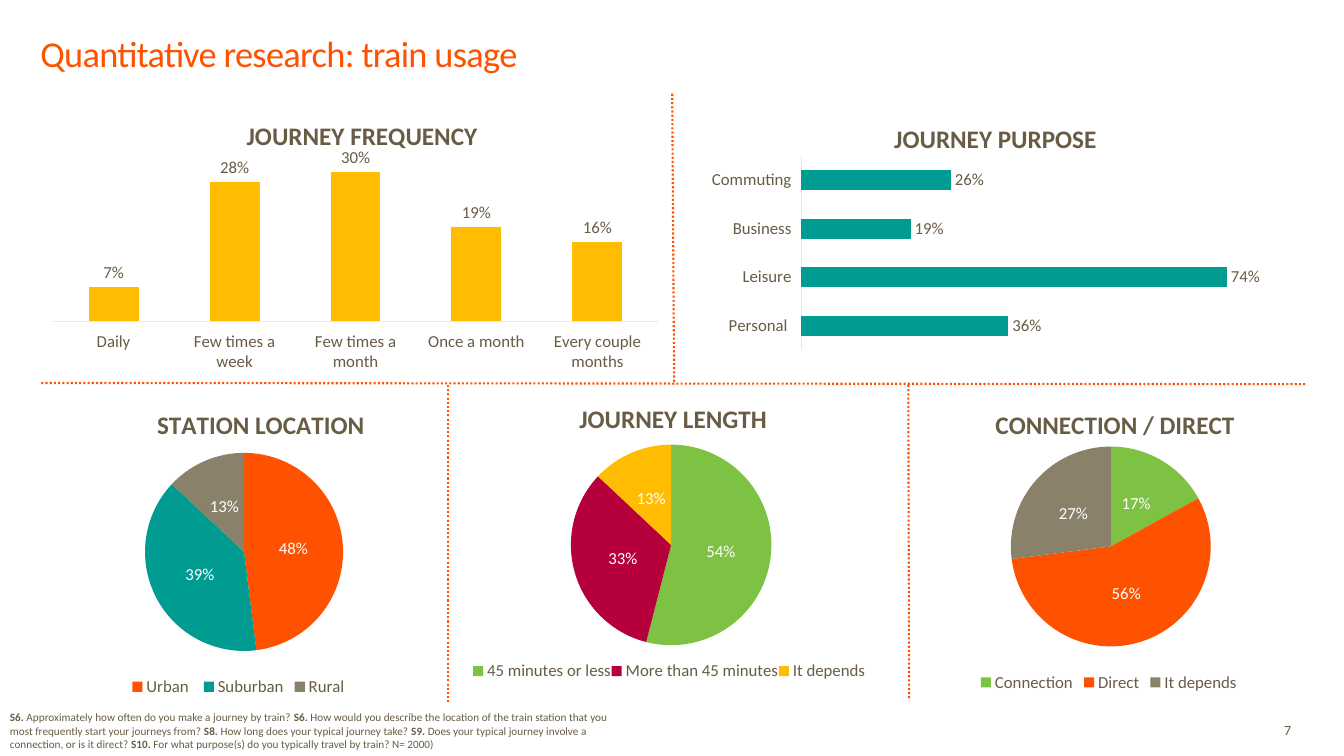
from lxml import etree
from pptx import Presentation
from pptx.chart.data import CategoryChartData
from pptx.dml.color import RGBColor
from pptx.enum.chart import XL_CHART_TYPE as ChartKind
from pptx.enum.chart import XL_LABEL_POSITION as LabelPos
from pptx.enum.chart import XL_LEGEND_POSITION as LegendPos
from pptx.enum.chart import XL_TICK_LABEL_POSITION as TickLabelPos
from pptx.enum.chart import XL_TICK_MARK as TickMark
from pptx.enum.dml import MSO_LINE
from pptx.enum.shapes import MSO_CONNECTOR
from pptx.enum.text import MSO_ANCHOR as Anchor
from pptx.enum.text import PP_ALIGN as Align
from pptx.oxml.ns import qn
from pptx.util import Cm, Pt

FONT = "Calibri"
ORANGE = RGBColor(0xFF, 0x52, 0x00)
BROWN = RGBColor(0x68, 0x5C, 0x45)
YELLOW = RGBColor(0xFF, 0xBC, 0x00)
TEAL = RGBColor(0x00, 0x9B, 0x91)
TAUPE = RGBColor(0x8A, 0x81, 0x6B)
GREEN = RGBColor(0x7D, 0xC2, 0x42)
CRIMSON = RGBColor(0xB6, 0x00, 0x3C)
PALE = RGBColor(0xEB, 0xE7, 0xE1)
WHITE = RGBColor(0xFF, 0xFF, 0xFF)

QUESTIONS = [
    ("S6. ", "Approximately how often do you make a journey by train? "),
    ("S6. ", "How would you describe the location of the train station that you "
             "most frequently start your journeys from? "),
    ("S8. ", "How long does your typical journey take? "),
    ("S9. ", "Does your typical journey involve a connection, or is it direct? "),
    ("S10. ", "For what purpose(s) do you typically travel by train? N= 2000)"),
]


def style_font(font, size, color=BROWN, bold=False):
    font.name = FONT
    font.size = Pt(size)
    font.bold = bold
    font.color.rgb = color


def add_text(slide, box, runs, size, color=BROWN, align=Align.LEFT,
             anchor=Anchor.TOP, line_height=None, tracking=None):
    """Add one paragraph made of (text, bold) runs; tracking is in 1/100 pt."""
    frame = slide.shapes.add_textbox(*map(Cm, box)).text_frame
    frame.margin_left = frame.margin_right = 0
    frame.margin_top = frame.margin_bottom = 0
    frame.word_wrap = True
    frame.vertical_anchor = anchor
    paragraph = frame.paragraphs[0]
    paragraph.alignment = align
    if line_height:
        paragraph.line_spacing = Pt(line_height)
    for text, bold in runs:
        run = paragraph.add_run()
        run.text = text
        style_font(run.font, size, color, bold)
        if tracking:
            run.font._element.set("spc", str(tracking))


def add_divider(slide, start, end):
    divider = slide.shapes.add_connector(
        MSO_CONNECTOR.STRAIGHT, *map(Cm, start + end))
    divider.line.color.rgb = ORANGE
    divider.line.width = Pt(1.5)
    divider.line.dash_style = MSO_LINE.ROUND_DOT
    etree.SubElement(divider._element.spPr, qn("a:effectLst"))


def set_layout(part, index, inner=False, **fractions):
    """Place a chart part by fractions of the chart's size."""
    for old in part.findall(qn("c:layout")):
        part.remove(old)
    layout = etree.Element(qn("c:layout"))
    manual = etree.SubElement(layout, qn("c:manualLayout"))
    settings = {"layoutTarget": "inner"} if inner else {}
    settings.update(xMode="edge", yMode="edge", **fractions)
    for tag, value in settings.items():
        etree.SubElement(manual, qn(f"c:{tag}")).set("val", str(value))
    part.insert(index, layout)


def add_chart(slide, kind, box, title, title_at, plot_box, shares,
              label_color, label_pos):
    data = CategoryChartData(number_format="0%")
    data.categories = list(shares)
    data.add_series("Series 1", list(shares.values()))
    chart = slide.shapes.add_chart(kind, *map(Cm, box), data).chart
    style_font(chart.font, 10)

    chart.has_title = True
    heading = chart.chart_title.text_frame.paragraphs[0].add_run()
    heading.text = title
    style_font(heading.font, 18, bold=True)
    set_layout(chart.chart_title._element, 1, x=title_at[0], y=title_at[1])
    plot_area = chart.element.find(".//" + qn("c:plotArea"))
    set_layout(plot_area, 0, inner=True, **dict(zip("xywh", plot_box)))

    plot = chart.plots[0]
    plot.has_data_labels = True
    labels = plot.data_labels
    labels.show_value = True
    labels.show_percentage = False
    labels.number_format = "0%"
    labels.number_format_is_linked = False
    labels.position = label_pos
    style_font(labels.font, 12, label_color)
    return chart


def add_bars(slide, kind, box, title, title_at, plot_box, shares, color,
             top_value, overlap=0):
    chart = add_chart(slide, kind, box, title, title_at, plot_box, shares,
                      BROWN, LabelPos.OUTSIDE_END)
    chart.has_legend = False
    plot = chart.plots[0]
    plot.vary_by_categories = False
    plot.gap_width = 142
    plot.overlap = overlap
    fill = plot.series[0].format.fill
    fill.solid()
    fill.fore_color.rgb = color

    categories, values = chart.category_axis, chart.value_axis
    categories.major_tick_mark = categories.minor_tick_mark = TickMark.NONE
    categories.tick_label_position = TickLabelPos.LOW
    categories.has_major_gridlines = False
    categories.format.line.color.rgb = PALE
    categories.format.line.width = Pt(0.75)
    style_font(categories.tick_labels.font, 12)
    values.minimum_scale, values.maximum_scale = 0, top_value
    values.has_major_gridlines = False
    values.visible = False


def add_pie(slide, box, title, title_at, plot_box, shares, colors,
            legend_box=None):
    chart = add_chart(slide, ChartKind.PIE, box, title, title_at, plot_box,
                      shares, WHITE, LabelPos.CENTER)
    chart.plots[0].vary_by_categories = True
    for index, color in enumerate(colors):
        fill = chart.plots[0].series[0].points[index].format.fill
        fill.solid()
        fill.fore_color.rgb = color
    chart.has_legend = True
    chart.legend.position = LegendPos.BOTTOM
    chart.legend.include_in_layout = False
    style_font(chart.legend.font, 12)
    if legend_box:
        set_layout(chart.legend._element, 1, **dict(zip("xywh", legend_box)))


def main():
    deck = Presentation()
    deck.slide_width, deck.slide_height = Cm(33.87), Cm(19.05)
    slide = deck.slides.add_slide(deck.slide_layouts[6])

    add_text(slide, (1.02, 0.69, 31.19, 1.19),
             [("Quantitative research: train usage", False)], 26, ORANGE,
             anchor=Anchor.BOTTOM, line_height=29, tracking=-50)

    add_bars(slide, ChartKind.COLUMN_CLUSTERED, (1.02, 2.36, 15.88, 7.09),
             "JOURNEY FREQUENCY", (0.32, 0.07), (0.02, 0.19, 0.96, 0.62),
             {"Daily": 0.07, "Few times a week": 0.28,
              "Few times a month": 0.3, "Once a month": 0.19,
              "Every couple months": 0.16}, YELLOW, 0.35, overlap=-27)
    add_bars(slide, ChartKind.BAR_CLUSTERED, (17.02, 2.44, 15.88, 7.09),
             "JOURNEY PURPOSE", (0.34, 0.07), (0.2, 0.21, 0.73, 0.69),
             {"Personal ": 0.36, "Leisure": 0.74, "Business": 0.19,
              "Commuting": 0.26}, TEAL, 0.8)

    add_pie(slide, (1.3, 9.68, 9.42, 7.98), "STATION LOCATION",
            (0.27, 0.06), (0.25, 0.2, 0.53, 0.66),
            {"Urban ": 0.48, "Suburban": 0.39, "Rural": 0.13},
            (ORANGE, TEAL, TAUPE))
    add_pie(slide, (11.91, 9.6, 9.91, 7.95), "JOURNEY LENGTH",
            (0.26, 0.05), (0.25, 0.2, 0.51, 0.64),
            {"45 minutes or less": 0.54, "More than 45 minutes": 0.33,
             "It depends": 0.13}, (GREEN, CRIMSON, YELLOW),
            legend_box=(0, 0.88, 1, 0.08))
    add_pie(slide, (22.99, 9.68, 9.91, 7.87), "CONNECTION / DIRECT",
            (0.2, 0.06), (0.25, 0.2, 0.51, 0.64),
            {"Connection": 0.17, "Direct": 0.56, "It depends": 0.27},
            (GREEN, ORANGE, TAUPE))

    for start, end in [((1.04, 9.65), (32.89, 9.68)),
                       ((16.94, 2.36), (16.99, 9.68)),
                       ((11.28, 9.7), (11.28, 17.75)),
                       ((22.89, 9.7), (22.91, 17.65))]:
        add_divider(slide, start, end)

    footnote = [run for code, question in QUESTIONS
                for run in ((code, True), (question, False))]
    add_text(slide, (0.25, 17.91, 15.32, 1.02), footnote, 8)
    add_text(slide, (31.93, 18.11, 0.61, 0.56), [("7", False)], 10,
             align=Align.RIGHT, anchor=Anchor.MIDDLE)

    deck.save("out.pptx")


if __name__ == "__main__":
    main()
